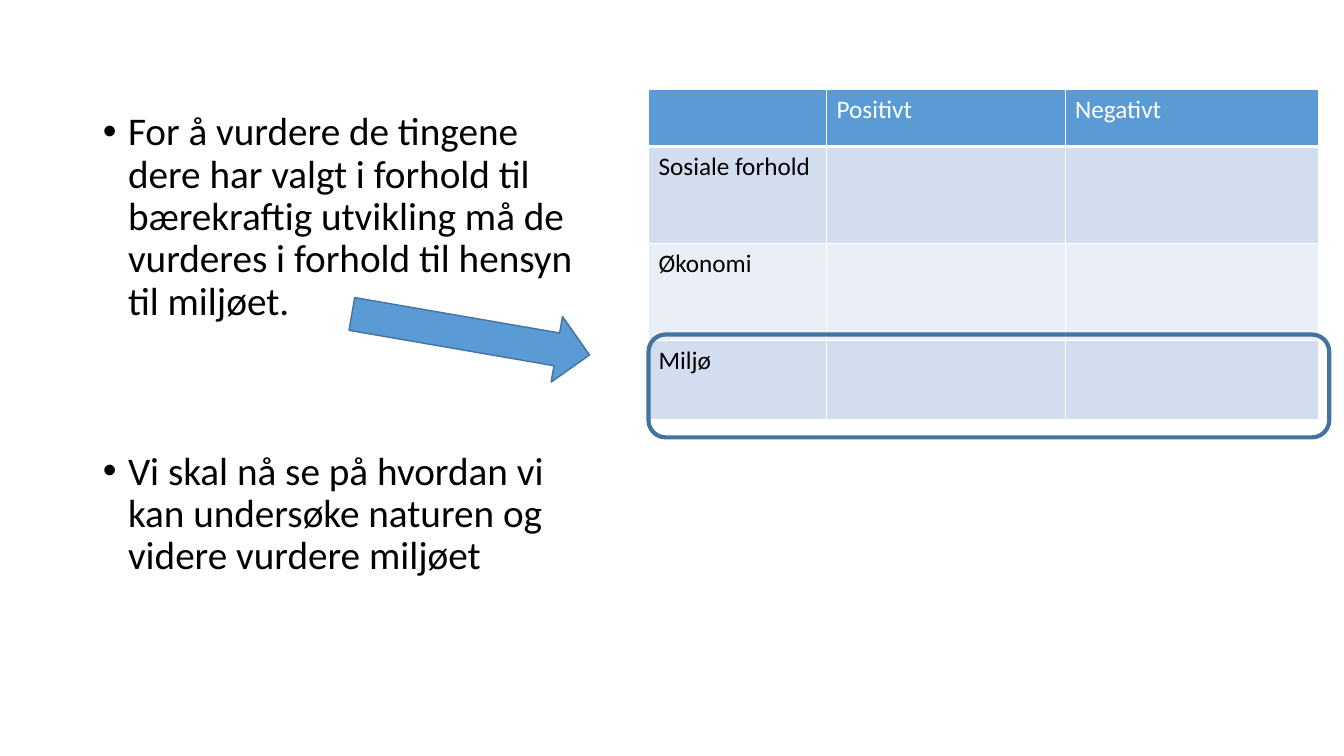
from lxml.etree import SubElement as Sub
from pptx import Presentation
from pptx.dml.color import RGBColor
from pptx.enum.shapes import MSO_SHAPE as Form
from pptx.enum.text import MSO_AUTO_SIZE as Fit
from pptx.oxml.ns import qn
from pptx.util import Inches, Pt

WHITE = RGBColor(0xFF, 0xFF, 0xFF)
BLACK = RGBColor(0, 0, 0)
BLUE = RGBColor(0x5B, 0x9B, 0xD5)
EDGE = RGBColor(0x43, 0x73, 0x9E)
PALE = RGBColor(0xD2, 0xDE, 0xEF)
LIGHT = RGBColor(0xEA, 0xEF, 0xF7)

POINTS = [
    ("For å vurdere de tingene dere har valgt i forhold til bærekraftig "
     "utvikling må de vurderes i forhold til hensyn til miljøet.", 10),
    ("Vi skal nå se på hvordan vi kan undersøke naturen og videre vurdere "
     "miljøet", 91),
]
ROWS = [
    ("", "Positivt", "Negativt"),
    ("Sosiale forhold", "", ""),
    ("Økonomi", "", ""),
    ("Miljø", "", ""),
]


def apply(item, form):
    for name, value in form.items():
        setattr(item, name, value)


class Deck:
    font = "Calibri"

    def __init__(self):
        self.show = Presentation()
        apply(self.show, {"slide_width": Inches(13.33),
                          "slide_height": Inches(7.5)})
        self.slide = self.show.slides.add_slide(self.show.slide_layouts[1])
        title = self.slide.shapes.title.element
        title.getparent().remove(title)

    def wide(self, share):
        return round(self.show.slide_width * share / 100)

    def high(self, share):
        return round(self.show.slide_height * share / 100)

    def box(self, left, top, width, height):
        return (self.wide(left), self.high(top),
                self.wide(width), self.high(height))

    def label(self, para, text, size, color):
        run = para.add_run()
        run.text = text
        apply(run.font, {"name": self.font, "size": Pt(size), "bold": False})
        run.font.color.rgb = color

    def body(self, place, points):
        holder = self.slide.placeholders[1]
        names = ("left", "top", "width", "height")
        apply(holder, dict(zip(names, self.box(*place))))
        frame = holder.text_frame
        apply(frame, {"word_wrap": True, "auto_size": Fit.NONE})
        for index, (text, gap) in enumerate(points):
            para = frame.add_paragraph() if index else frame.paragraphs[0]
            apply(para, {"line_spacing": 0.9, "space_before": Pt(gap)})
            props = para._p.get_or_add_pPr()
            props.set("marL", str(Inches(0.25)))
            props.set("indent", str(Inches(-0.25)))
            Sub(props, qn("a:buFont"), typeface="Arial")
            Sub(props, qn("a:buChar"), char="•")
            self.label(para, text, 28, BLACK)

    def border(self, cell, base):
        props = cell._tc.get_or_add_tcPr()
        for side, width in (("L", 1), ("R", 1), ("T", 1), ("B", base)):
            line = Sub(props, qn(f"a:ln{side}"), w=str(Pt(width)))
            fill = Sub(line, qn("a:solidFill"))
            Sub(fill, qn("a:srgbClr"), val=str(WHITE))

    def table(self, left, top, widths, heights, rows):
        place = self.box(left, top, sum(widths), sum(heights))
        grid = self.slide.shapes.add_table(
            len(rows), len(widths), *place).table
        for col, width in zip(grid.columns, widths):
            col.width = self.wide(width)
        for row, height in zip(grid.rows, heights):
            row.height = self.high(height)
        for r, texts in enumerate(rows):
            back = (PALE if r % 2 else LIGHT) if r else BLUE
            for c, text in enumerate(texts):
                cell = grid.cell(r, c)
                self.border(cell, 1 if r else 3)
                cell.fill.solid()
                cell.fill.fore_color.rgb = back
                if text:
                    self.label(cell.text_frame.paragraphs[0], text, 18,
                               BLACK if r else WHITE)

    def shape(self, form, place, width, fill=None, turn=0):
        item = self.slide.shapes.add_shape(form, *self.box(*place))
        item.shadow.inherit = False
        item.rotation = turn
        if fill is None:
            item.fill.background()
        else:
            item.fill.solid()
            item.fill.fore_color.rgb = fill
        item.line.color.rgb = EDGE
        item.line.width = Pt(width)


def main():
    deck = Deck()
    deck.body((6.9, 14.15, 38.25, 75.85), POINTS)
    deck.table(48.25, 11.8, (13.25, 17.75, 18.85),
               (7.6, 12.8, 12.8, 10.55), ROWS)
    deck.shape(Form.ROUNDED_RECTANGLE, (48.25, 44.25, 50.65, 13.6), 3)
    deck.shape(Form.RIGHT_ARROW, (26.05, 39.85, 17.95, 8.8), 1, BLUE, 9.8)
    deck.show.save("out.pptx")


if __name__ == "__main__":
    main()
